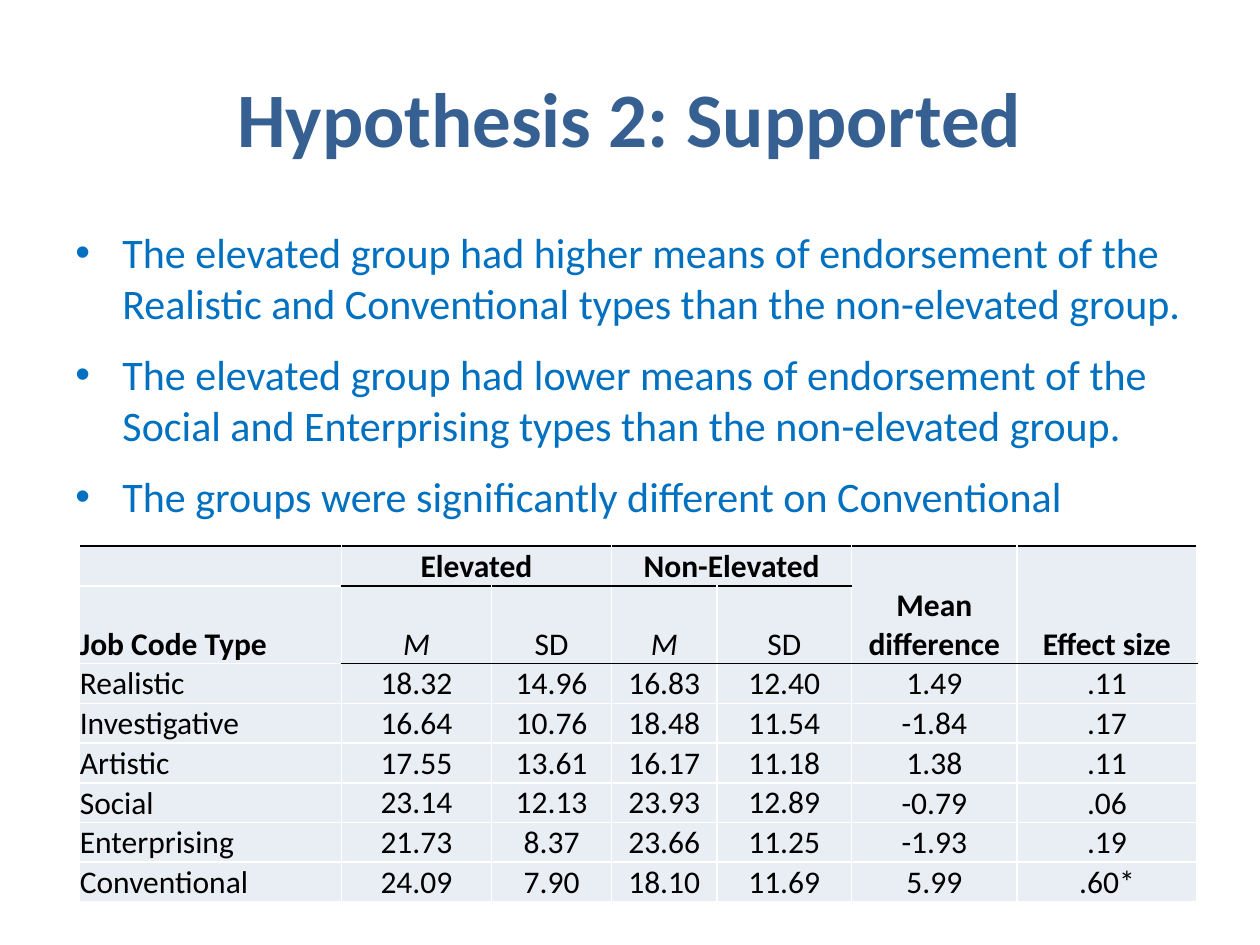
from dataclasses import dataclass

from lxml.etree import SubElement
from pptx import Presentation
from pptx.dml.color import RGBColor
from pptx.enum.text import MSO_ANCHOR, PP_ALIGN
from pptx.oxml.ns import qn
from pptx.util import Cm, Pt


@dataclass(frozen=True)
class Theme:
    """Colours, font and type sizes of the slide."""
    font: str = "Calibri"
    title: str = "376092"
    bullet: str = "0070C0"
    ink: str = "000000"
    rule: str = "FFFFFF"
    cell: str = "E9EDF4"
    title_size: int = 44
    bullet_size: int = 24
    table_size: int = 18


THEME = Theme()

FINDINGS = [
    "The elevated group had higher means of endorsement of the Realistic and "
    "Conventional types than the non-elevated group.",
    "The elevated group had lower means of endorsement of the Social and "
    "Enterprising types than the non-elevated group.",
    "The groups were significantly different on Conventional",
]

COLUMN_WIDTHS = [5.29, 3.03, 2.42, 2.12, 2.72, 3.33, 3.63]
ROW_HEIGHTS = [0.8, 1.57] + [0.8] * 6
MERGES = [((0, 1), (0, 2)), ((0, 3), (0, 4)), ((0, 5), (1, 5)), ((0, 6), (1, 6))]
SCORES = [
    ["", "Elevated", "", "Non-Elevated", "", "Mean difference", "Effect size"],
    ["Job Code Type", "M", "SD", "M", "SD", "", ""],
    ["Realistic", "18.32", "14.96", "16.83", "12.40", "1.49", ".11"],
    ["Investigative", "16.64", "10.76", "18.48", "11.54", "-1.84", ".17"],
    ["Artistic", "17.55", "13.61", "16.17", "11.18", "1.38", ".11"],
    ["Social", "23.14", "12.13", "23.93", "12.89", "-0.79", ".06"],
    ["Enterprising", "21.73", "8.37", "23.66", "11.25", "-1.93", ".19"],
    ["Conventional", "24.09", "7.90", "18.10", "11.69", "5.99", ".60*"],
]


def add_run(paragraph, text, size, color, bold=False, italic=False):
    """Add one formatted run to a paragraph."""
    run = paragraph.add_run()
    run.text = text
    font = run.font
    font.name, font.size = THEME.font, Pt(size)
    font.bold, font.italic = bold, italic
    font.color.rgb = RGBColor.from_string(color)


def place_title(slide, text):
    """Position and format the title placeholder."""
    title = slide.shapes.title
    title.left, title.top, title.width, title.height = Cm(1.27), Cm(0.76), Cm(22.86), Cm(3.18)
    title.text_frame.vertical_anchor = MSO_ANCHOR.MIDDLE
    paragraph = title.text_frame.paragraphs[0]
    paragraph.alignment = PP_ALIGN.CENTER
    add_run(paragraph, text, THEME.title_size, THEME.title, bold=True)


def add_bullets(slide, findings):
    """Add the bulleted findings with hanging indents."""
    frame = slide.shapes.add_textbox(Cm(1.27), Cm(4.45), Cm(22.86), Cm(12.57)).text_frame
    frame.word_wrap = True
    for index, finding in enumerate(findings):
        paragraph = frame.add_paragraph() if index else frame.paragraphs[0]
        properties = paragraph._p.get_or_add_pPr()
        properties.set("marL", str(Cm(0.95)))
        properties.set("indent", str(-Cm(0.95)))
        SubElement(properties, qn("a:buFont"), typeface="Arial")
        SubElement(properties, qn("a:buChar"), char="•")
        paragraph.space_before = Pt(THEME.bullet_size / 2 if index else 0)
        add_run(paragraph, finding, THEME.bullet_size, THEME.bullet)


def rule_above(row, column):
    """Return the colour of the rule above a table position."""
    dark = row == 0 or (row == 1 and 1 <= column <= 4) or (row == 2 and column >= 1)
    return THEME.ink if dark else THEME.rule


def draw_borders(cell, top, bottom):
    """Draw the four one-point borders of a cell."""
    edges = {"a:lnL": THEME.rule, "a:lnR": THEME.rule, "a:lnT": top, "a:lnB": bottom}
    for tag, color in edges.items():
        line = SubElement(cell._tc.get_or_add_tcPr(), qn(tag), w=str(Pt(1)))
        SubElement(SubElement(line, qn("a:solidFill")), qn("a:srgbClr"), val=color)


def fill_cell(cell, text, row, column):
    """Format one cell by its place in the table and write its text."""
    draw_borders(cell, rule_above(row, column), rule_above(row + cell.span_height, column))
    cell.fill.solid()
    cell.fill.fore_color.rgb = RGBColor.from_string(THEME.cell)
    cell.margin_left = cell.margin_right = cell.margin_top = Cm(0.02)
    cell.margin_bottom = 0
    is_score = row >= 2 and 1 <= column <= 4
    cell.vertical_anchor = MSO_ANCHOR.TOP if is_score else MSO_ANCHOR.BOTTOM
    if text:
        paragraph = cell.text_frame.paragraphs[0]
        paragraph.alignment = PP_ALIGN.CENTER if column else PP_ALIGN.LEFT
        is_heading = row == 0 or (row == 1 and column == 0)
        add_run(paragraph, text, THEME.table_size, THEME.ink, bold=is_heading, italic=text == "M")


def add_score_table(slide, scores):
    """Add the table of group means and differences."""
    table = slide.shapes.add_table(
        len(scores), len(COLUMN_WIDTHS), Cm(1.59), Cm(11.01),
        Cm(sum(COLUMN_WIDTHS)), Cm(sum(ROW_HEIGHTS))).table
    table.first_row = table.horz_banding = False
    for column, width in zip(table.columns, COLUMN_WIDTHS):
        column.width = Cm(width)
    for row, height in zip(table.rows, ROW_HEIGHTS):
        row.height = Cm(height)
    for first, last in MERGES:
        table.cell(*first).merge(table.cell(*last))
    for row, texts in enumerate(scores):
        for column, text in enumerate(texts):
            fill_cell(table.cell(row, column), text, row, column)


def main():
    """Build and save the slide."""
    presentation = Presentation()
    presentation.slide_width, presentation.slide_height = Cm(25.4), Cm(19.05)
    slide = presentation.slides.add_slide(presentation.slide_layouts[5])
    place_title(slide, "Hypothesis 2: Supported")
    add_bullets(slide, FINDINGS)
    add_score_table(slide, SCORES)
    presentation.save("out.pptx")


if __name__ == "__main__":
    main()
